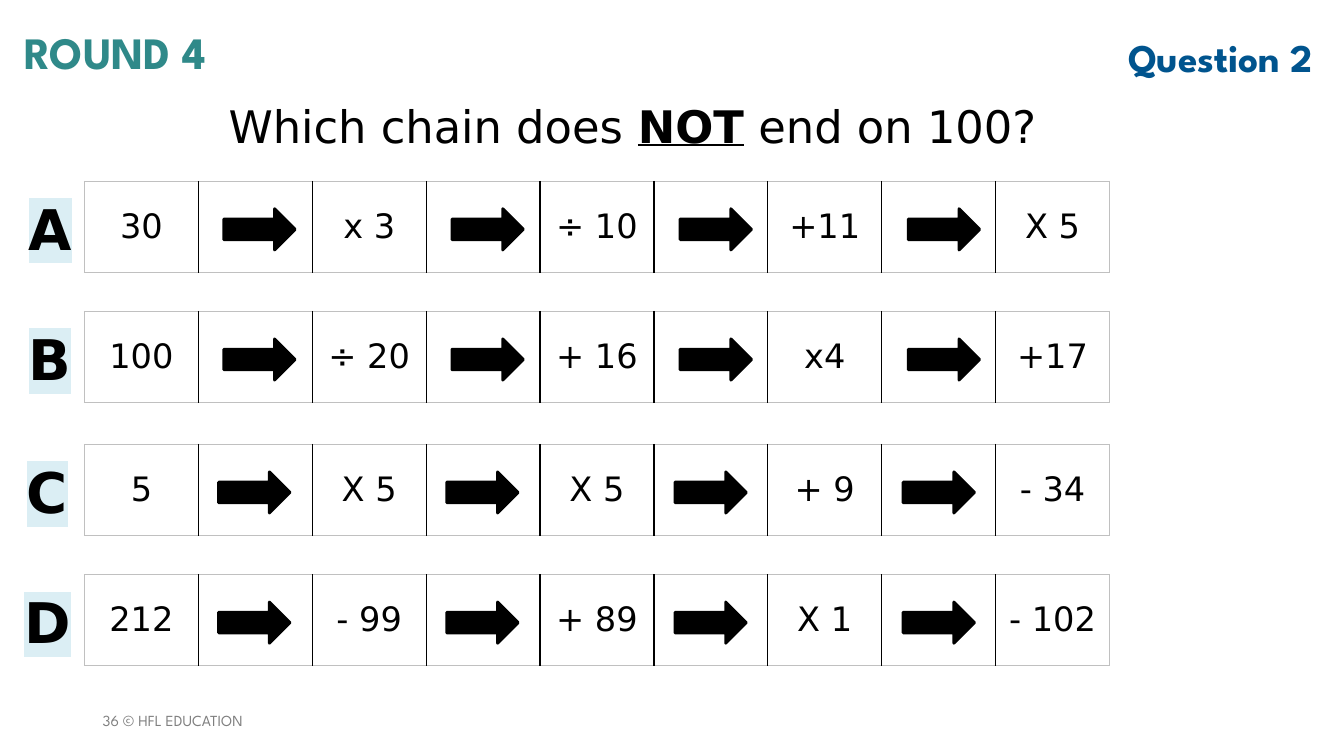
import pptx
import pptx.util
import pptx.dml.color
import pptx.enum.shapes
import pptx.enum.text
import pptx.oxml
import pptx.oxml.ns

Cm = pptx.util.Cm
Pt = pptx.util.Pt
RGB = pptx.dml.color.RGBColor
ALIGN = pptx.enum.text.PP_ALIGN
MIDDLE = pptx.enum.text.MSO_ANCHOR.MIDDLE
ARROW = pptx.enum.shapes.MSO_SHAPE.RIGHT_ARROW

BLACK = RGB(0x00, 0x00, 0x00)
WHITE = RGB(0xFF, 0xFF, 0xFF)
GREY = RGB(0x7F, 0x7F, 0x7F)
SILVER = RGB(0xC0, 0xC0, 0xC0)
TEAL = RGB(0x2F, 0x89, 0x89)
BLUE = RGB(0x00, 0x54, 0x8E)
PALE = RGB(0xDB, 0xEE, 0xF4)
SANS = "DejaVu Sans"
LEAGUE = "League Spartan"

TITLE = ("Which chain does ", "NOT", " end on 100?")
ROUND = "ROUND 4"
QUESTION = "Question 2"
FOOTER = "36 © HFL EDUCATION"

# letter, letter left, letter width, top, first arrow left, steps
CHAINS = [
    ("A", 0.48, 1.63, 4.57, 5.64, ("30", "x 3", "÷ 10", "+11", "X 5")),
    ("B", 0.48, 1.63, 7.85, 5.64, ("100", "÷ 20", "+ 16", "x4", "+17")),
    ("C", 0.43, 1.55, 11.2, 5.51, ("5", "X 5", "X 5", "+ 9", "- 34")),
    ("D", 0.36, 1.7, 14.48, 5.51, ("212", "- 99", "+ 89", "X 1", "- 102")),
]
LEFT, COL, ROW = 2.13, 2.87, 2.29
PITCH = 5.75


def style(run, face, size, color, bold=False):
    run.font.name = face
    run.font.size = Pt(size)
    run.font.bold = bold
    run.font.color.rgb = color


def label(slide, box, words, face, size, color, bold=False, wrap=True):
    frame = slide.shapes.add_textbox(*map(Cm, box)).text_frame
    frame.word_wrap = wrap
    para = frame.paragraphs[0]
    for word in words:
        run = para.add_run()
        run.text = word
        style(run, face, size, color, bold)
    return frame


def mark(run, color):
    props = run.font.fill._xPr
    xml = '<a:highlight %s><a:srgbClr val="%s"/></a:highlight>'
    light = pptx.oxml.parse_xml(xml % (pptx.oxml.ns.nsdecls("a"), color))
    props.find(pptx.oxml.ns.qn("a:solidFill")).addnext(light)


def border(cell, sides):
    props = cell._tc.get_or_add_tcPr()
    xml = ('<a:ln%s %s w="12700"><a:solidFill><a:srgbClr val="%s"/>'
           '</a:solidFill></a:ln%s>')
    for spot, (side, color) in enumerate(sides):
        line = xml % (side, pptx.oxml.ns.nsdecls("a"), color, side)
        props.insert(spot, pptx.oxml.parse_xml(line))


def grid(slide, top, steps):
    count = 2 * len(steps) - 1
    table = slide.shapes.add_table(
        1, count, Cm(LEFT), Cm(top), Cm(COL * count), Cm(ROW)).table
    table.first_row = False
    table.horz_banding = False
    for col in range(count):
        table.columns[col].width = Cm(COL)
        cell = table.cell(0, col)
        cell.fill.solid()
        cell.fill.fore_color.rgb = WHITE
        cell.vertical_anchor = MIDDLE
        border(cell, (
            ("L", BLACK if col else SILVER),
            ("R", BLACK if col < count - 1 else SILVER),
            ("T", SILVER),
            ("B", SILVER),
        ))
        if col % 2 == 0:
            cell.text_frame.text = steps[col // 2]
            para = cell.text_frame.paragraphs[0]
            para.alignment = ALIGN.CENTER
            style(para.runs[0], SANS, 24, BLACK)


def arrows(slide, left, top, count):
    for spot in range(count):
        arrow = slide.shapes.add_shape(
            ARROW, Cm(left + spot * PITCH), Cm(top), Cm(1.8), Cm(1.04))
        arrow.shadow.inherit = False
        arrow.fill.solid()
        arrow.fill.fore_color.rgb = BLACK
        arrow.line.color.rgb = BLACK
        arrow.line.width = Pt(2)


def main():
    deck = pptx.Presentation()
    deck.slide_width = Cm(33.87)
    deck.slide_height = Cm(19.05)
    slide = deck.slides.add_slide(deck.slide_layouts[6])

    foot = label(slide, (2.34, 17.65, 6.99, 1.02), [FOOTER], LEAGUE, 11, GREY)
    foot.vertical_anchor = MIDDLE
    head = label(slide, (5.51, 2.39, 28, 1.55), TITLE, SANS, 32, BLACK)
    head.vertical_anchor = MIDDLE
    stress = head.paragraphs[0].runs[1].font
    stress.bold = True
    stress.underline = True

    for letter, left, width, top, start, steps in CHAINS:
        grid(slide, top, steps)
        arrows(slide, start, top + 0.69, len(steps) - 1)
        frame = label(slide, (left, top + 0.2, width, 1.96), [letter],
                      SANS, 40, BLACK, True, False)
        mark(frame.paragraphs[0].runs[0], PALE)

    turn = label(slide, (0.38, -0.3, 24.99, 3.2), [ROUND],
                 LEAGUE, 32, TEAL, True)
    turn.vertical_anchor = MIDDLE
    ask = label(slide, (27.79, 0.71, 5.54, 1.47), [QUESTION],
                LEAGUE, 28, BLUE, True)
    ask.paragraphs[0].alignment = ALIGN.RIGHT

    deck.save("out.pptx")


if __name__ == "__main__":
    main()
